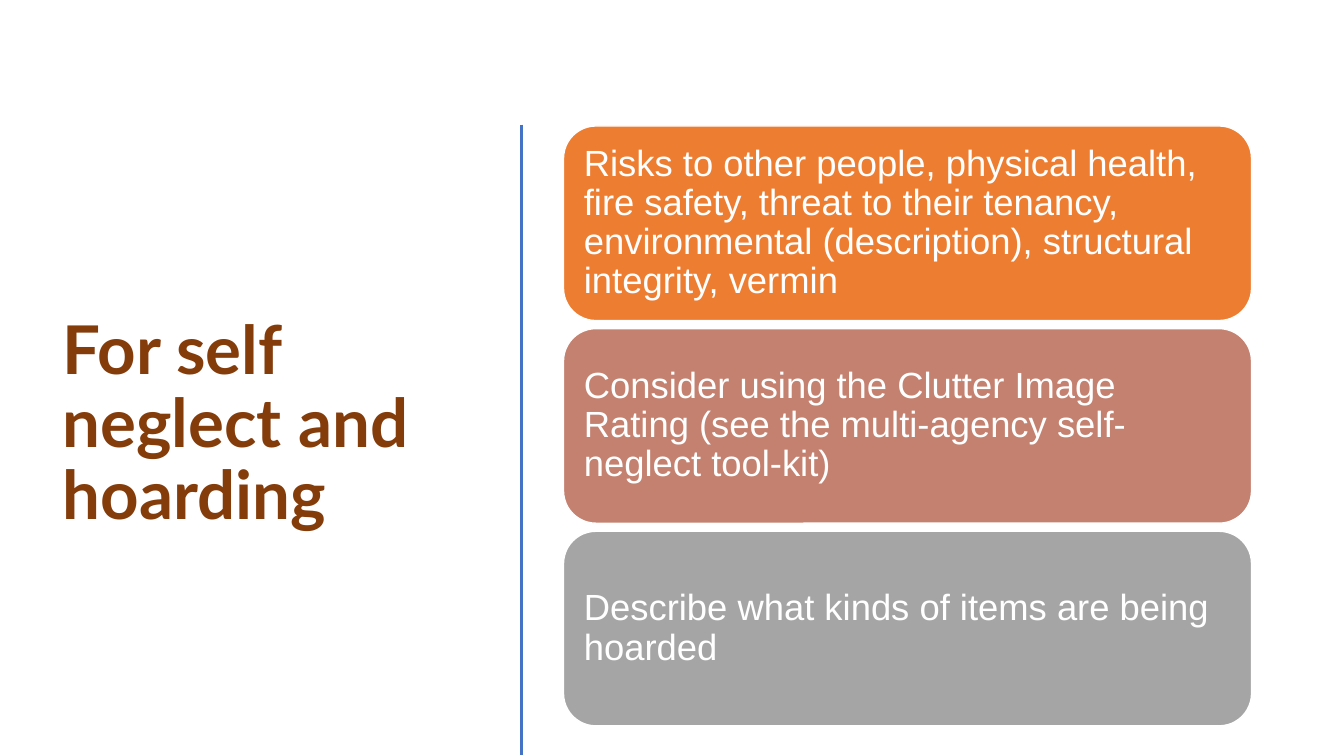
from pptx import Presentation
from pptx.dml.color import RGBColor
from pptx.enum.shapes import MSO_CONNECTOR as Connector, MSO_SHAPE as Shape
from pptx.enum.text import MSO_ANCHOR as Anchor, MSO_AUTO_SIZE as AutoSize, PP_ALIGN as Align
from pptx.oxml.ns import qn
from pptx.util import Pt
from lxml import etree

BROWN = RGBColor(0x84, 0x3C, 0x0B)
BLUE = RGBColor(0x44, 0x72, 0xC4)
ORANGE = RGBColor(0xED, 0x7D, 0x31)
ROSE = RGBColor(0xC4, 0x81, 0x70)
GREY = RGBColor(0xA5, 0xA5, 0xA5)
WHITE = RGBColor(0xFF, 0xFF, 0xFF)

HEADING_FONT = {"name": "Lato", "size": Pt(48), "bold": True}
ADVICE_FONT = {"name": "Arial", "size": Pt(26), "bold": False}


def write(holder, text, font, color, inset):
    frame = holder.text_frame
    frame.text = text
    frame_format = {"word_wrap": True, "auto_size": AutoSize.NONE,
                    "vertical_anchor": Anchor.MIDDLE,
                    "margin_left": inset, "margin_right": inset}
    for key, value in frame_format.items():
        setattr(frame, key, value)
    paragraph = frame.paragraphs[0]
    paragraph.alignment = Align.LEFT
    paragraph.line_spacing = 0.9
    run_font = paragraph.runs[0].font
    for key, value in font.items():
        setattr(run_font, key, value)
    run_font.color.rgb = color


prs = Presentation()
prs.slide_width, prs.slide_height = Pt(960), Pt(540)
slide = prs.slides.add_slide(prs.slide_layouts[5])

# Heading on the left
heading = slide.shapes.title
heading_place = {"left": Pt(37.5), "top": Pt(84), "width": Pt(310), "height": Pt(440)}
for key, value in heading_place.items():
    setattr(heading, key, value)
write(heading, "For self neglect and hoarding", HEADING_FONT, BROWN, Pt(7.2))

# Vertical divider
divider = slide.shapes.add_connector(Connector.STRAIGHT, Pt(372.5), Pt(89), Pt(372.5), Pt(539.5))
divider.line.color.rgb = BLUE
divider.line.width = Pt(2)
etree.SubElement(divider.line._get_or_add_ln().getparent(), qn("a:effectLst"))

# Stacked advice cards
CARD_TOP, CARD_HEIGHT, CARD_PITCH = 90, 139, 144.75
advice = [
    ("Risks to other people, physical health, fire safety, threat to their tenancy, "
     "environmental (description), structural integrity, vermin", ORANGE),
    ("Consider using the Clutter Image Rating (see the multi-agency self-neglect tool-kit)", ROSE),
    ("Describe what kinds of items are being hoarded", GREY),
]
for row, (text, color) in enumerate(advice):
    card = slide.shapes.add_shape(Shape.ROUNDED_RECTANGLE, Pt(402.5),
                                  Pt(CARD_TOP + row * CARD_PITCH), Pt(491.5), Pt(CARD_HEIGHT))
    card.shadow.inherit = False
    card.fill.solid()
    card.fill.fore_color.rgb = color
    card.line.color.rgb = WHITE
    card.line.width = Pt(1)
    write(card, text, ADVICE_FONT, WHITE, Pt(7.8))

prs.save("out.pptx")
